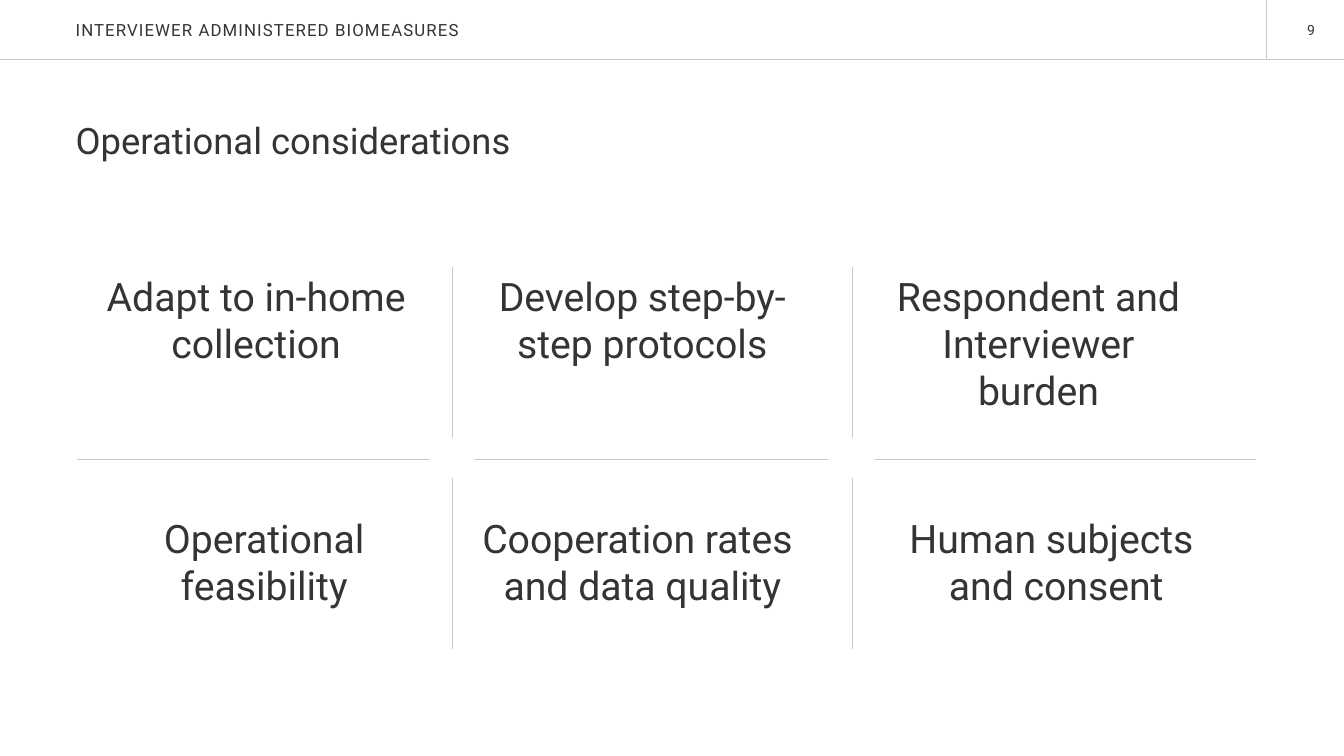
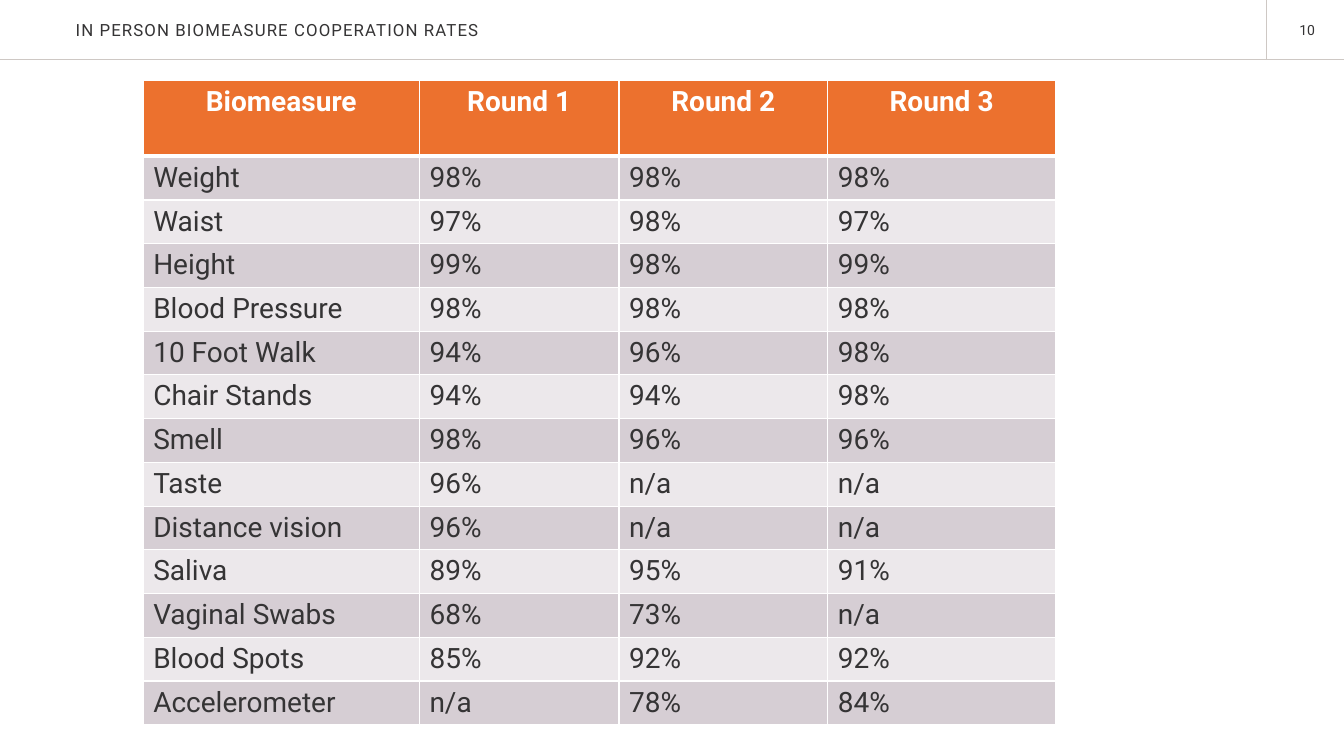
from lxml import etree
from pptx import Presentation
from pptx.dml.color import RGBColor
from pptx.enum import shapes, text
from pptx.oxml import ns
from pptx.util import Inches, Pt

# Shared style
FONT = "Roboto"
INK = RGBColor(0x35, 0x34, 0x35)
RULE = RGBColor(0xCE, 0xC8, 0xC4)
WHITE = RGBColor(0xFF, 0xFF, 0xFF)
ORANGE = RGBColor(0xEC, 0x71, 0x2E)
BANDS = (RGBColor(0xD6, 0xCE, 0xD4), RGBColor(0xEC, 0xE8, 0xEB))
LEFT, CENTER, RIGHT = (text.PP_ALIGN.LEFT, text.PP_ALIGN.CENTER,
                       text.PP_ALIGN.RIGHT)
SLIDE_W, SLIDE_H = 13.33, 7.5
MARGIN = 0.75
HEADER_H = 0.59
TITLE_AND_CONTENT, TITLE_ONLY = 1, 5

# Slide content: (left, top, width, lines)
CONSIDERATIONS = [
    (0.89, 2.65, 3.3, ["Adapt to in-home collection"]),
    (4.72, 2.65, 3.3, ["Develop step-by-step protocols"]),
    (8.62, 2.65, 3.36, ["Respondent and Interviewer burden"]),
    (0.97, 5.05, 3.3, ["Operational feasibility"]),
    (4.62, 5.05, 3.5, ["Cooperation rates ", "and data quality"]),
    (8.59, 5.05, 3.77, ["Human subjects ", "and consent"]),
]
RATES = [
    ("Biomeasure", "Round 1", "Round 2", "Round 3"),
    ("Weight", "98%", "98%", "98%"),
    ("Waist", "97%", "98%", "97%"),
    ("Height", "99%", "98%", "99%"),
    ("Blood Pressure", "98%", "98%", "98%"),
    ("10 Foot Walk", "94%", "96%", "98%"),
    ("Chair Stands", "94%", "94%", "98%"),
    ("Smell", "98%", "96%", "96%"),
    ("Taste", "96%", "n/a", "n/a"),
    ("Distance vision", "96%", "n/a", "n/a"),
    ("Saliva", "89%", "95%", "91%"),
    ("Vaginal Swabs", "68%", "73%", "n/a"),
    ("Blood Spots", "85%", "92%", "92%"),
    ("Accelerometer", "n/a", "78%", "84%"),
]


def write(tf, lines, size, color=INK, bold=False, align=LEFT, tracking=0):
    """Fill a text frame with one paragraph per line."""
    for i, line in enumerate(lines):
        p = tf.add_paragraph() if i else tf.paragraphs[0]
        p.alignment = align
        p.space_before = Pt(0)
        r = p.add_run()
        r.text = line
        r.font.name = FONT
        r.font.size = Pt(size)
        r.font.bold = bold
        r.font.color.rgb = color
        if tracking:
            r.font._element.set("spc", str(round(tracking * 100)))


def place(s, left, top, width, height):
    s.left, s.top = Inches(left), Inches(top)
    s.width, s.height = Inches(width), Inches(height)


def fill_placeholder(s, box, line, anchor, **style):
    """Position a placeholder without insets and give it one line."""
    place(s, *box)
    tf = s.text_frame
    tf.word_wrap = True
    tf.auto_size = text.MSO_AUTO_SIZE.NONE
    tf.vertical_anchor = anchor
    tf.margin_left = tf.margin_right = tf.margin_top = tf.margin_bottom = 0
    write(tf, [line], **style)


def add_text(slide, left, top, width, height, lines, **style):
    s = slide.shapes.add_textbox(Inches(left), Inches(top),
                                 Inches(width), Inches(height))
    s.text_frame.word_wrap = True
    write(s.text_frame, lines, **style)


def add_rule(slide, x1, y1, x2, y2, weight=0.5):
    s = slide.shapes.add_connector(shapes.MSO_CONNECTOR.STRAIGHT, Inches(x1),
                                   Inches(y1), Inches(x2), Inches(y2))
    s.line.color.rgb = RULE
    s.line.width = Pt(weight)
    etree.SubElement(s._element.spPr, ns.qn("a:effectLst"))


def add_slide(prs, layout, title, number):
    """Add a slide with the common header band."""
    slide = prs.slides.add_slide(prs.slide_layouts[layout])
    add_rule(slide, 0, HEADER_H, SLIDE_W, HEADER_H, 0.65)
    add_rule(slide, 12.56, 0, 12.56, HEADER_H, 0.65)
    add_text(slide, 12.64, 0.16, 0.5, 0.27, [str(number)], size=10,
             align=RIGHT)
    fill_placeholder(slide.shapes.title, (MARGIN, 0, 9.3, 0.6), title,
                     text.MSO_ANCHOR.MIDDLE, size=12, tracking=0.8)
    return slide


def add_heading(slide, heading):
    """Use the body placeholder as an unbulleted heading."""
    s = slide.placeholders[1]
    pPr = s.text_frame.paragraphs[0]._p.get_or_add_pPr()
    pPr.set("marL", "0")
    pPr.set("indent", "0")
    etree.SubElement(pPr, ns.qn("a:buNone"))
    fill_placeholder(s, (MARGIN, 1.17, 11.83, 1), heading,
                     text.MSO_ANCHOR.TOP, size=26)


def set_borders(cell, **weights):
    """Draw white borders; weights are points for L, R, T and B."""
    tcPr = cell._tc.get_or_add_tcPr()
    for side in "LRTB":
        ln = etree.SubElement(tcPr, ns.qn(f"a:ln{side}"),
                              w=str(Pt(weights.get(side, 1))))
        fill = etree.SubElement(ln, ns.qn("a:solidFill"))
        etree.SubElement(fill, ns.qn("a:srgbClr"), val=str(WHITE))


def add_rates_table(slide, left, top, col_widths, header_h, row_h):
    height = header_h + row_h * (len(RATES) - 1)
    table = slide.shapes.add_table(
        len(RATES), len(col_widths), Inches(left), Inches(top),
        Inches(sum(col_widths)), Inches(height)).table
    for column, width in zip(table.columns, col_widths):
        column.width = Inches(width)
    for i, values in enumerate(RATES):
        table.rows[i].height = Inches(row_h if i else header_h)
        for j, value in enumerate(values):
            cell = table.cell(i, j)
            # The heavy border lies between the header and the first row
            set_borders(cell, T=3 if i == 1 else 1, B=1 if i else 3)
            cell.fill.solid()
            cell.fill.fore_color.rgb = BANDS[(i - 1) % 2] if i else ORANGE
            write(cell.text_frame, [value], size=20, bold=i == 0,
                  color=INK if i else WHITE, align=LEFT if i else CENTER)


def build_considerations(prs):
    slide = add_slide(prs, TITLE_AND_CONTENT,
                      "INTERVIEWER ADMINISTERED BIOMEASURES", 9)
    add_heading(slide, "Operational considerations")
    # Grid rules
    for top in (2.65, 4.74):
        for x in (4.49, 8.45):
            add_rule(slide, x, top, x, top + 1.7)
    for x1, x2 in ((0.76, 4.27), (4.7, 8.21), (8.68, 12.46)):
        add_rule(slide, x1, 4.56, x2, 4.56)
    # Grid texts
    for left, top, width, lines in CONSIDERATIONS:
        add_text(slide, left, top, width, 1.35, lines, size=28, align=CENTER)


def build_rates(prs):
    slide = add_slide(prs, TITLE_ONLY,
                      "IN PERSON BIOMEASURE COOPERATION RATES", 10)
    add_rates_table(slide, 1.42, 0.8, (2.74, 1.98, 2.07, 2.26), 0.75, 0.41)


def main():
    prs = Presentation()
    prs.slide_width, prs.slide_height = Inches(SLIDE_W), Inches(SLIDE_H)
    build_considerations(prs)
    build_rates(prs)
    prs.save("out.pptx")


if __name__ == "__main__":
    main()
